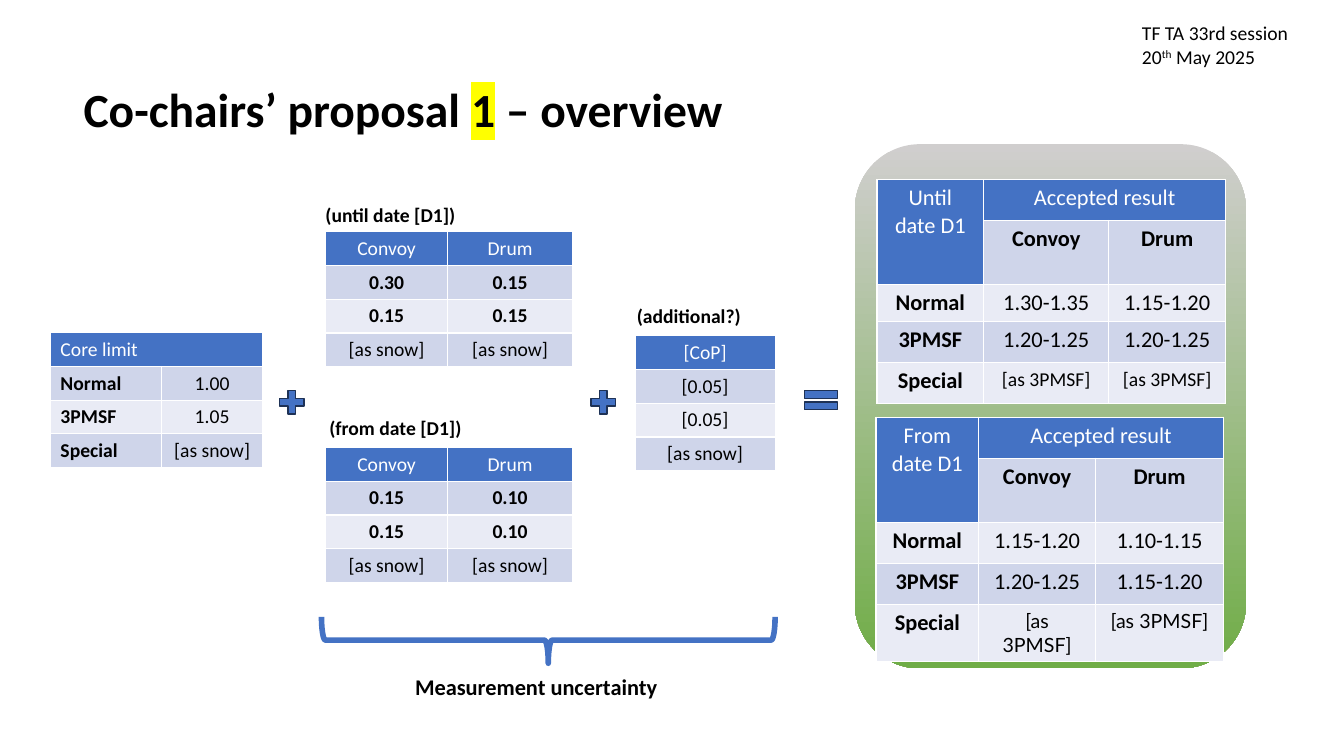
import pptx
import pptx.util
import pptx.dml.color
import pptx.enum.shapes
import pptx.enum.text
import pptx.oxml
import pptx.oxml.ns
from dataclasses import dataclass

Pt = pptx.util.Pt
Shape = pptx.enum.shapes.MSO_SHAPE
Align = pptx.enum.text.PP_ALIGN
Fit = pptx.enum.text.MSO_AUTO_SIZE


def rgb(code):
    return pptx.dml.color.RGBColor.from_string(code)


@dataclass
class Theme:
    font = "Calibri"
    blue = rgb("4472C4")
    navy = rgb("1E3256")
    dark = rgb("CFD5EA")
    light = rgb("E9EBF5")
    gray = rgb("D0CECE")
    green = rgb("70AD47")
    black = rgb("000000")
    white = rgb("FFFFFF")
    mark = "FFFF00"
    title = 34
    large = 16
    small = 14


theme = Theme()


def style(para, size, bold, color=theme.black, font=theme.font):
    para.font.name = font
    para.font.size = Pt(size)
    para.font.bold = bold
    para.font.color.rgb = color


deck = pptx.Presentation()
deck.slide_width, deck.slide_height = Pt(960), Pt(540)
slide = deck.slides.add_slide(deck.slide_layouts[6])
shapes = slide.shapes

panel = shapes.add_shape(Shape.ROUNDED_RECTANGLE, Pt(610.6), Pt(103), Pt(279.4), Pt(374.4))
panel.shadow.inherit = False
panel.line.fill.background()
panel.fill.gradient()
panel.fill.gradient_angle = 270
for stop, color, place in zip(panel.fill.gradient_stops, (theme.gray, theme.green), (0, 1)):
    stop.color.rgb = color
    stop.position = place

labels = [
    (52.6, 53.3, 846, 48.2, theme.title, True, True, [["Co-chairs’ proposal ", "1", " – overview"]]),
    (808.6, 11.5, 157, 41, theme.small, False, True,
     [["TF TA 33rd session"], ["20", "th", " May 2025"]]),
    (225.4, 141.1, 111.6, 24.5, theme.small, True, False, [["(until date [D1])"]]),
    (228.2, 293.8, 116.6, 24.5, theme.small, True, True, [["(from date [D1])"]]),
    (447.8, 213.8, 90, 24.5, theme.small, True, False, [["(additional?)"]]),
    (289.4, 477.4, 190, 26.6, theme.large, True, False, [["Measurement uncertainty"]]),
]
for x, y, w, h, size, bold, wrap, lines in labels:
    frame = shapes.add_textbox(Pt(x), Pt(y), Pt(w), Pt(h)).text_frame
    frame.word_wrap = wrap
    frame.auto_size = Fit.SHAPE_TO_FIT_TEXT
    for row, parts in enumerate(lines):
        para = frame.add_paragraph() if row else frame.paragraphs[0]
        style(para, size, bold)
        for part in parts:
            run = para.add_run()
            run.text = part
            if part == "th":
                run._r.get_or_add_rPr().set("baseline", "30000")
            if part == "1":
                run._r.get_or_add_rPr().append(pptx.oxml.parse_xml(
                    f'<a:highlight {pptx.oxml.ns.nsdecls("a")}>'
                    f'<a:srgbClr val="{theme.mark}"/></a:highlight>'))

strong = {"Normal", "3PMSF", "Special", "Convoy", "Drum", "0.30", "0.15", "0.10"}
pair = ["Convoy", "Drum"]
snow = "[as snow]"
alike = "[as 3PMSF]"
even = [24.1] * 4
tall = [29.3] * 5
sides = [(0, 0, 1, 0), (0, 1, 0, 2)]
tables = [
    (232.6, 165.6, [87.1, 89.3], even, theme.small, theme.font, [],
     [pair, ["0.30", "0.15"], ["0.15", "0.15"], [snow, snow]]),
    (36, 237.6, [79.2, 72.7], even, theme.small, theme.font, [(0, 0, 0, 1)],
     [["Core limit", ""], ["Normal", "1.00"], ["3PMSF", "1.05"], ["Special", snow]]),
    (453.6, 239.8, [100.1], even, theme.small, theme.font, [],
     [["[CoP]"], ["[0.05]"], ["[0.05]"], [snow]]),
    (626.4, 128.2, [76.3, 89.3, 83.5], [29.3, 29.3, 24, 29.3, 29.3], theme.large, theme.font, sides,
     [["Until date D1", "Accepted result", ""], ["", *pair],
      ["Normal", "1.30-1.35", "1.15-1.20"], ["3PMSF", "1.20-1.25", "1.20-1.25"],
      ["Special", alike, alike]]),
    (232.6, 319.7, [87.1, 89.3], even, theme.small, theme.font, [],
     [pair, ["0.15", "0.10"], ["0.15", "0.10"], [snow, snow]]),
    (625.7, 298.1, [73.4, 83.5, 91.5], tall, theme.large, "Lato", sides,
     [["From date D1", "Accepted result", ""], ["", *pair],
      ["Normal", "1.15-1.20", "1.10-1.15"], ["3PMSF", "1.20-1.25", "1.15-1.20"],
      ["Special", alike, alike]]),
]
for x, y, cols, rows, size, face, spans, data in tables:
    grid = shapes.add_table(len(rows), len(cols), Pt(x), Pt(y), Pt(sum(cols)), Pt(sum(rows))).table
    for col, width in zip(grid.columns, cols):
        col.width = Pt(width)
    for row, height in zip(grid.rows, rows):
        row.height = Pt(height)
    for top, left, low, right in spans:
        grid.cell(top, left).merge(grid.cell(low, right))
    core = data[0][0] == "Core limit"
    for r, line in enumerate(data):
        for c, text in enumerate(line):
            cell = grid.cell(r, c)
            cell.text = text
            cell.fill.solid()
            cell.fill.fore_color.rgb = theme.blue if r == 0 else theme.dark if r % 2 else theme.light
            para = cell.text_frame.paragraphs[0]
            para.alignment = Align.LEFT if core and c == 0 else Align.CENTER
            style(para, theme.small if text == alike else size, r > 0 and text in strong,
                  theme.black if r else theme.white, face if text == alike else theme.font)

signs = [
    (Shape.MATH_PLUS, 196.6, 275.8, 23.8),
    (Shape.MATH_PLUS, 419, 275.8, 23.8),
    (Shape.MATH_EQUAL, 570.2, 274.3, 32.4),
]
for kind, x, y, w in signs:
    sign = shapes.add_shape(kind, Pt(x), Pt(y), Pt(w), Pt(23))
    sign.shadow.inherit = False
    sign.fill.solid()
    sign.fill.fore_color.rgb = theme.blue
    sign.line.color.rgb = theme.navy
    sign.line.width = Pt(1)

brace = shapes.add_shape(Shape.LEFT_BRACE, Pt(375.1), Pt(295.2), Pt(33.1), Pt(324))
brace.rotation = 270
brace.shadow.inherit = False
brace.fill.background()
brace.line.color.rgb = theme.blue
brace.line.width = Pt(4)

deck.save("out.pptx")
